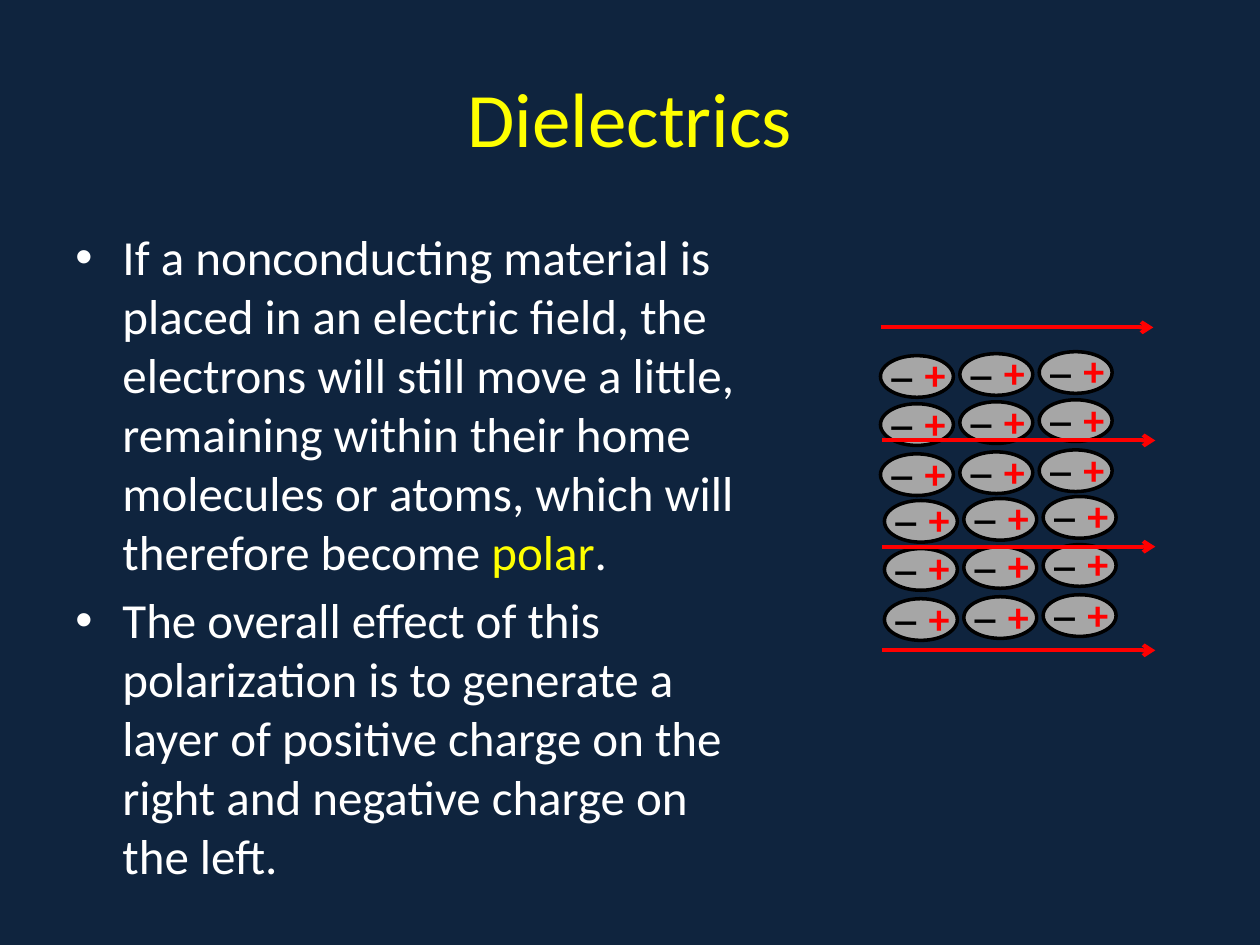
from itertools import product

from lxml.etree import SubElement
from pptx import Presentation
from pptx.dml.color import RGBColor
from pptx.enum.shapes import MSO_CONNECTOR as CONN, MSO_SHAPE as SHAPE
from pptx.enum.text import MSO_ANCHOR as ANCHOR, PP_ALIGN as ALIGN
from pptx.oxml.ns import qn
from pptx.util import Cm, Pt

COLORS = {"bg": "0F243E", "title": "FFFF00", "text": "FFFFFF",
          "molecule": "A6A6A6", "black": "000000", "red": "FF0000"}
BULLETS = [
    [("If a nonconducting material is placed in an electric field, the electrons "
      "will still move a little, remaining within their home molecules or atoms, "
      "which will therefore become ", "text"), ("polar", "title"), (".", "text")],
    [("The overall effect of this polarization is to generate a layer of positive "
      "charge on the right and negative charge on the left.", "text")],
]


def rgb(name):
    """Return the named colour."""
    return RGBColor.from_string(COLORS[name])


def add_run(p, text, size=28, color="text", bold=False):
    """Append a formatted run to a paragraph."""
    r = p.add_run()
    r.text = text
    r.font.name, r.font.size, r.font.bold = "Calibri", Pt(size), bold
    r.font.color.rgb = rgb(color)


def add_box(shapes, x, y, w, h, anchor=ANCHOR.TOP):
    """Add a wrapping text box and return its text frame."""
    tf = shapes.add_textbox(Cm(x), Cm(y), Cm(w), Cm(h)).text_frame
    tf.word_wrap, tf.vertical_anchor = True, anchor
    return tf


def add_title(s, x, y, w, h):
    """Place the centred slide title."""
    p = add_box(s.shapes, x, y, w, h, ANCHOR.MIDDLE).paragraphs[0]
    p.alignment = ALIGN.CENTER
    add_run(p, "Dielectrics", size=44, color="title")


def add_body(s, x, y, w, h):
    """Place the bulleted explanation."""
    tf = add_box(s.shapes, x, y, w, h)
    for i, runs in enumerate(BULLETS):
        p = tf.add_paragraph() if i else tf.paragraphs[0]
        p.space_before = Pt(5.6)
        pPr = p._p.get_or_add_pPr()
        pPr.set("marL", str(Cm(0.95)))
        pPr.set("indent", str(-Cm(0.95)))
        SubElement(pPr, qn("a:buFont"), typeface="Arial")
        SubElement(pPr, qn("a:buChar"), char="•")
        for text, color in runs:
            add_run(p, text, color=color)


def add_molecule(shapes, x, y):
    """Draw one polarized molecule with its two charges."""
    sp = shapes.add_shape(SHAPE.OVAL, Cm(x), Cm(y), Cm(1.47), Cm(0.84))
    sp.shadow.inherit = False
    sp.fill.solid()
    sp.fill.fore_color.rgb = rgb("molecule")
    sp.line.color.rgb, sp.line.width = rgb("black"), Pt(2)
    for sign, dx, dy, color in (("+", 0.64, -0.26, "red"), ("_", -0.03, -0.56, "black")):
        p = add_box(shapes, x + dx, y + dy, 1.07, 1.27).paragraphs[0]
        add_run(p, sign, size=24, color=color, bold=True)


def add_field_line(shapes, x, y, w):
    """Draw one field line pointing right."""
    line = shapes.add_connector(CONN.STRAIGHT, Cm(x), Cm(y), Cm(x + w), Cm(y))
    line.line.color.rgb, line.line.width = rgb("red"), Pt(2.25)
    SubElement(line.line._get_or_add_ln(), qn("a:tailEnd"), type="arrow")
    SubElement(line._element.spPr, qn("a:effectLst"))


def add_diagram(s, x, y, w):
    """Draw two blocks of three molecule rows, crossed by field lines."""
    shapes = s.shapes.add_group_shape().shapes
    for block, row_y, col in product(range(2), (0, 0.97, 1.98), range(3)):
        add_molecule(shapes, x + 0.08 * block + 1.6 * col,
                     y + 0.57 + 2.92 * block + row_y - 0.04 * col)
    for dx, dy in ((0, 0), (0.04, 2.28), (0.04, 4.42), (0.04, 6.51)):
        add_field_line(shapes, x + dx, y + dy, w)


def main():
    """Build the slide and save it."""
    prs = Presentation()
    prs.slide_width, prs.slide_height = Cm(25.4), Cm(19.05)
    s = prs.slides.add_slide(prs.slide_layouts[6])
    s.background.fill.solid()
    s.background.fill.fore_color.rgb = rgb("bg")
    add_title(s, 1.27, 0.76, 22.86, 3.18)
    add_body(s, 1.27, 4.45, 14.4, 13.77)
    add_diagram(s, 17.75, 6.6, 5.5)
    prs.save("out.pptx")


if __name__ == "__main__":
    main()
